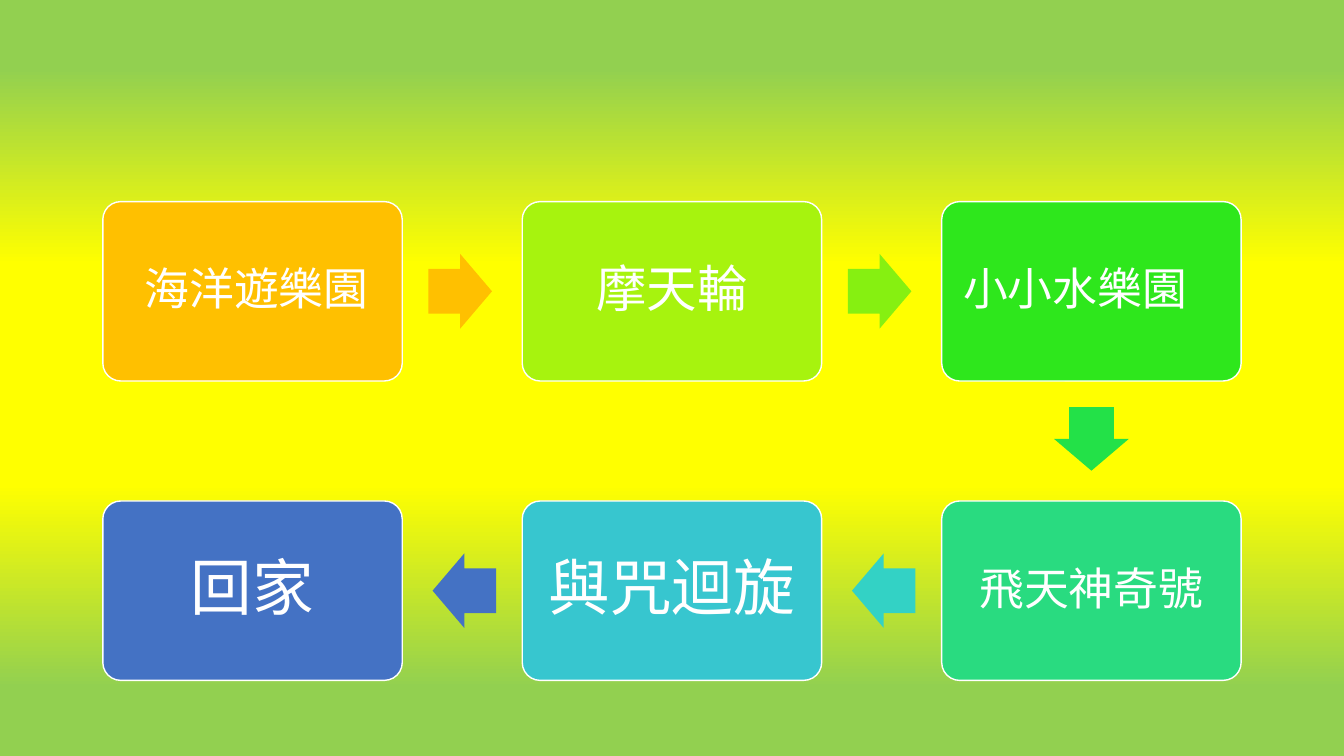
import copy
import math

import pptx
import pptx.dml.color
import pptx.enum.shapes
import pptx.enum.text
import pptx.oxml.ns
import pptx.util

RGBColor = pptx.dml.color.RGBColor
Shape = pptx.enum.shapes.MSO_SHAPE
Inches = pptx.util.Inches

WHITE = RGBColor(0xFF, 0xFF, 0xFF)
GRASS = RGBColor(0x92, 0xD0, 0x50)
YELLOW = RGBColor(0xFF, 0xFF, 0x00)
AMBER = RGBColor(0xFF, 0xC0, 0x00)
LIME = RGBColor(0xA7, 0xF3, 0x0E)
LEAF = RGBColor(0x86, 0xF0, 0x11)
GREEN = RGBColor(0x2E, 0xE7, 0x1C)
EMERALD = RGBColor(0x23, 0xE1, 0x48)
JADE = RGBColor(0x29, 0xDB, 0x80)
TURQUOISE = RGBColor(0x33, 0xD2, 0xC5)
CYAN = RGBColor(0x37, 0xC6, 0xCF)
BLUE = RGBColor(0x44, 0x72, 0xC4)

# name, column, row, text size, horizontal nudge, box colour, colour of the arrow leading here
STOPS = [
    ("海洋遊樂園", 0, 0, 32, 0.04, AMBER, None),
    ("摩天輪", 1, 0, 36, 0, LIME, AMBER),
    ("小小水樂園", 2, 0, 32, -0.16, GREEN, LEAF),
    ("飛天神奇號", 2, 1, 32, 0, JADE, EMERALD),
    ("與咒迴旋", 1, 1, 44, 0, CYAN, TURQUOISE),
    ("回家", 0, 1, 44, 0, BLUE, BLUE),
]


class RouteSlide:
    FONT = "Calibri"
    LEFT, TOP = 1.02, 2.0
    COLUMN, ROW = 4.16, 2.97
    BOX_WIDTH, BOX_HEIGHT = 2.97, 1.78
    ARROW_LENGTH, ARROW_WIDTH = 0.63, 0.74
    ARROW_SETBACK = 0.02

    def __init__(self, deck):
        self.page = deck.slides.add_slide(deck.slide_layouts[6])

    def background(self, stops):
        """Fill the page top to bottom with (position, colour) stops."""
        fill = self.page.background.fill
        fill.gradient()
        fill.gradient_angle = 270
        stop_list = self.page.element.find(".//" + pptx.oxml.ns.qn("a:gsLst"))
        while len(stop_list) < len(stops):
            stop_list.append(copy.deepcopy(stop_list[0]))
        for stop, (position, colour) in zip(fill.gradient_stops, stops):
            stop.position = position
            stop.color.rgb = colour

    def centre(self, column, row):
        return (self.LEFT + column * self.COLUMN + self.BOX_WIDTH / 2,
                self.TOP + row * self.ROW + self.BOX_HEIGHT / 2)

    def shape(self, kind, centre, width, height, colour):
        x, y = centre
        shape = self.page.shapes.add_shape(
            kind, Inches(x - width / 2), Inches(y - height / 2), Inches(width), Inches(height))
        shape.shadow.inherit = False
        shape.fill.solid()
        shape.fill.fore_color.rgb = colour
        return shape

    def stop_box(self, name, column, row, size, nudge, colour):
        box = self.shape(Shape.ROUNDED_RECTANGLE, self.centre(column, row),
                         self.BOX_WIDTH, self.BOX_HEIGHT, colour)
        box.adjustments[0] = 0.1
        box.line.color.rgb = WHITE
        box.line.width = pptx.util.Pt(1)
        frame = box.text_frame
        frame.word_wrap = True
        frame.vertical_anchor = pptx.enum.text.MSO_ANCHOR.MIDDLE
        inset = size / 245
        frame.margin_top = frame.margin_bottom = Inches(inset)
        frame.margin_left = Inches(inset + max(0, 2 * nudge))
        frame.margin_right = Inches(inset + max(0, -2 * nudge))
        para = frame.paragraphs[0]
        para.text = name
        para.alignment = pptx.enum.text.PP_ALIGN.CENTER
        para.line_spacing = 0.9
        para.font.name = self.FONT
        para.font.size = pptx.util.Pt(size)
        para.font.color.rgb = WHITE

    def arrow(self, start, end, colour):
        """Point from one grid cell to the next, slightly nearer the first."""
        (x1, y1), (x2, y2) = self.centre(*start), self.centre(*end)
        angle = math.atan2(y2 - y1, x2 - x1)
        middle = ((x1 + x2) / 2 - self.ARROW_SETBACK * math.cos(angle),
                  (y1 + y2) / 2 - self.ARROW_SETBACK * math.sin(angle))
        arrow = self.shape(Shape.RIGHT_ARROW, middle,
                           self.ARROW_LENGTH, self.ARROW_WIDTH, colour)
        arrow.adjustments[0] = 0.6
        arrow.adjustments[1] = 0.5
        arrow.rotation = math.degrees(angle)
        arrow.line.fill.background()


def main():
    deck = pptx.Presentation()
    deck.slide_width, deck.slide_height = Inches(13.33), Inches(7.5)
    route = RouteSlide(deck)
    route.background([(0.09, GRASS), (0.35, YELLOW), (0.64, YELLOW), (0.91, GRASS)])
    previous = None
    for name, column, row, size, nudge, box_colour, arrow_colour in STOPS:
        if previous:
            route.arrow(previous, (column, row), arrow_colour)
        route.stop_box(name, column, row, size, nudge, box_colour)
        previous = (column, row)
    deck.save("out.pptx")


if __name__ == "__main__":
    main()
